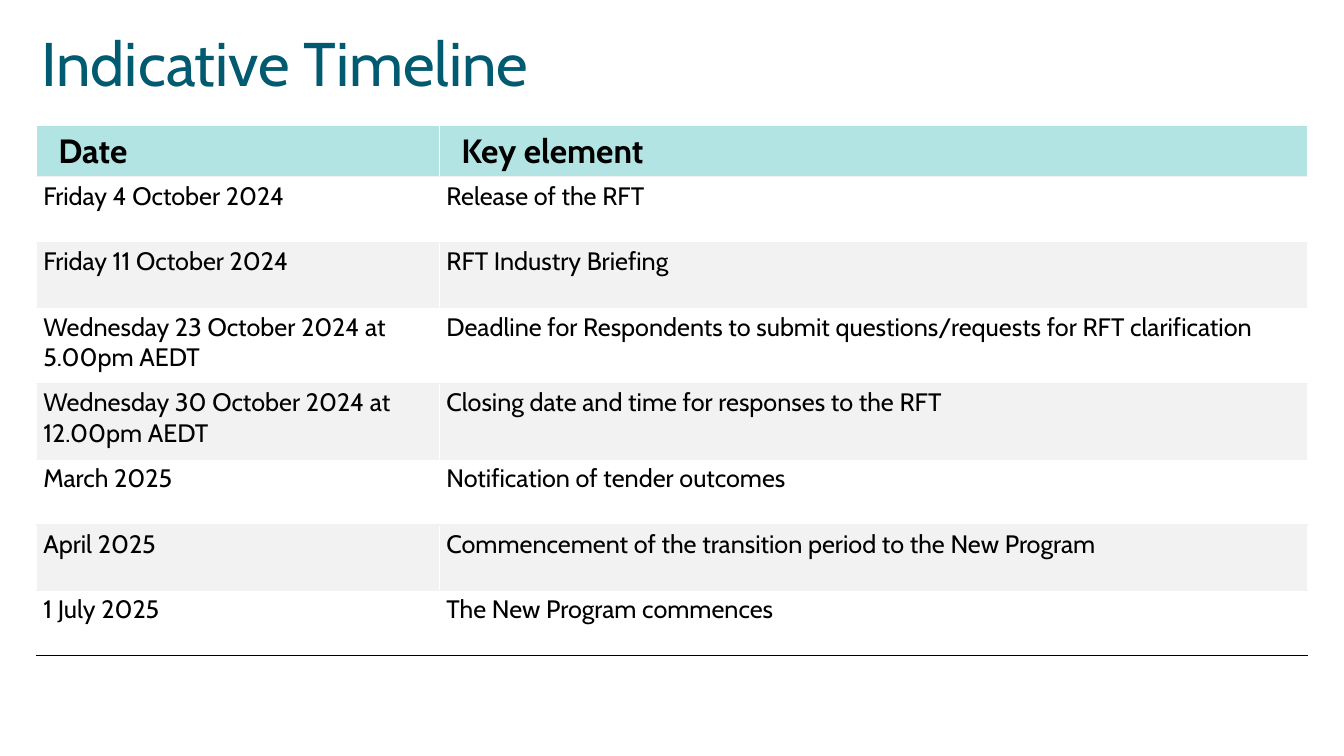
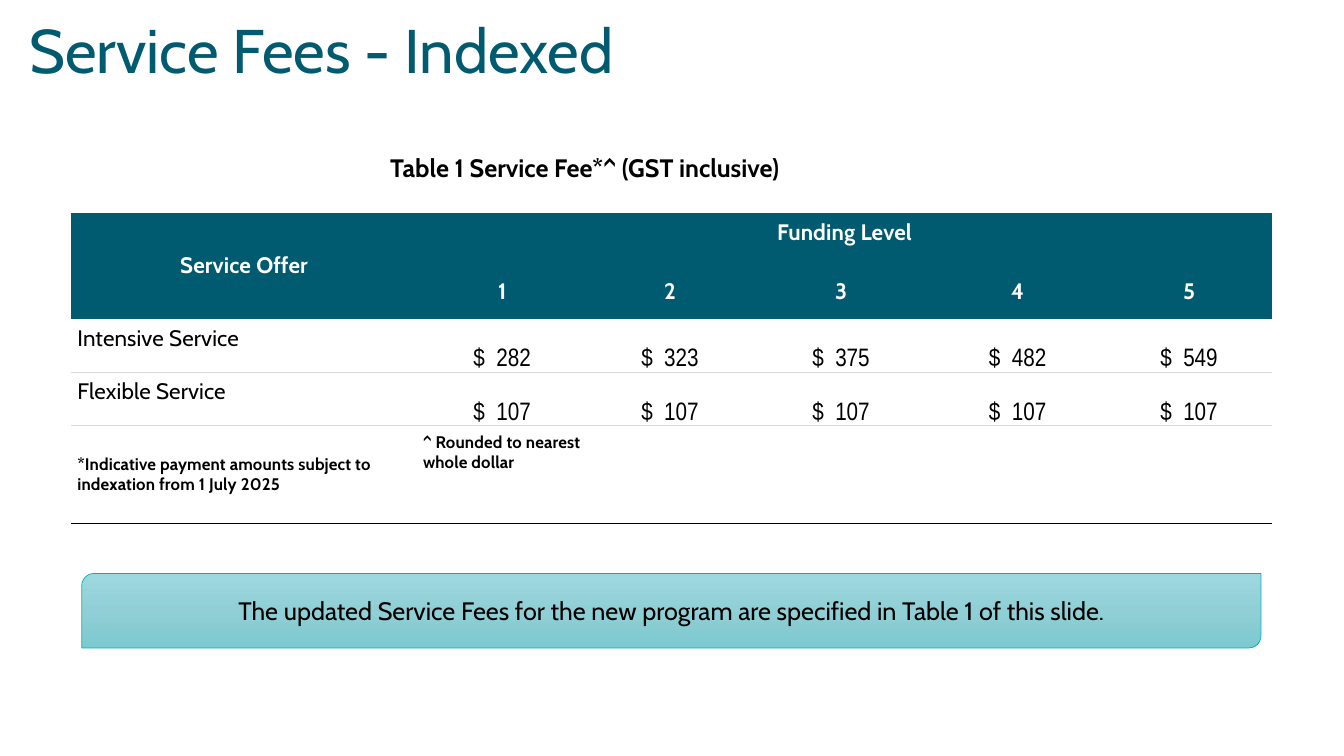
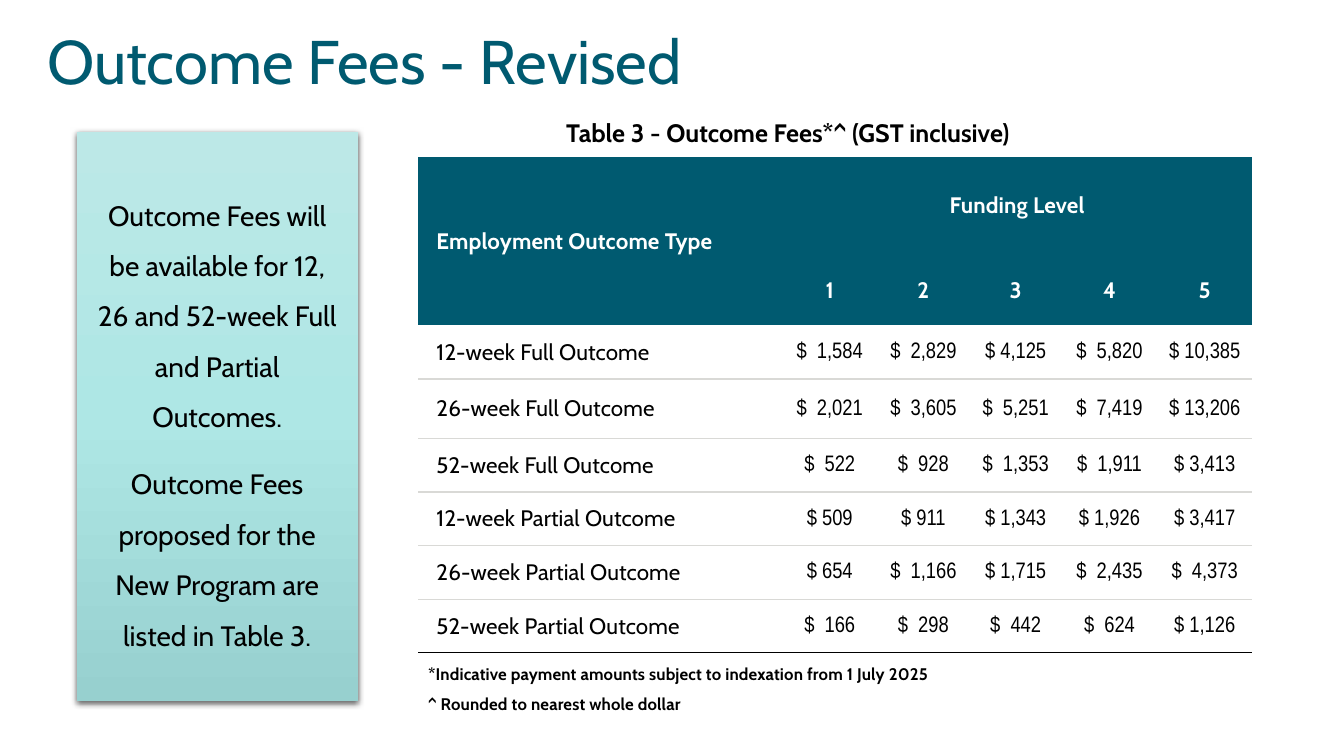
from copy import deepcopy

from lxml.etree import SubElement
from pptx import Presentation
from pptx.dml.color import RGBColor
from pptx.enum.shapes import MSO_SHAPE
from pptx.enum.text import MSO_ANCHOR, PP_ALIGN
from pptx.oxml.ns import qn
from pptx.util import Cm, Pt

# Shared palette and text formats
TEAL, AQUA, PALE, RULE = "005A70", "B1E4E3", "F2F2F2", "D9D9D6"
BLACK, WHITE = "000000", "FFFFFF"
NO_GRID_STYLE = "{2D5ABB26-0587-4C30-8999-92F81FD0307C}"

TITLE = dict(size=Pt(44), name="Cabin")
CAPTION = dict(size=Pt(18), name="Cabin", bold=True)
BODY = dict(size=Pt(18), name="Cabin")
PANEL = dict(size=Pt(20), name="Cabin")
DATE_HEAD = dict(size=Pt(24), name="Cabin", bold=True)
FEE_HEAD = dict(size=Pt(16), name="Cabin", bold=True)
FEE_LABEL = dict(size=Pt(16), name="Cabin")
NOTE = dict(size=Pt(12), name="Cabin", bold=True)

TOP, MIDDLE, BOTTOM = MSO_ANCHOR.TOP, MSO_ANCHOR.MIDDLE, MSO_ANCHOR.BOTTOM
LEFT, CENTER = PP_ALIGN.LEFT, PP_ALIGN.CENTER
# Insets in cm: left, top, right, bottom
TIMELINE_INSET = (0.18, 0.1, 0.18, 0.1)
HEAD_INSET = (0.56, 0.13, 0.25, 0.13)
FEE_INSET = (0.15, 0.15, 0.15, 0.15)
INDENTED_INSET = (0.46, 0.15, 0.15, 0.15)
AMOUNT_INSET = (0.03, 0.03, 0.03, 0)

INDEXATION = "*Indicative payment amounts subject to indexation from 1 July 2025"
ROUNDING = "^ Rounded to nearest whole dollar"


def color(value):
    return RGBColor.from_string(value)


# Text helpers
def set_insets(target, inset):
    for side, length in zip(("left", "top", "right", "bottom"), inset):
        setattr(target, f"margin_{side}", Cm(length))


def write(frame, lines, font, ink=BLACK, align=LEFT, spacing=0, **layout):
    for index, line in enumerate(lines):
        paragraph = frame.add_paragraph() if index else frame.paragraphs[0]
        paragraph.alignment = align
        if index:
            paragraph.space_before = Pt(12)
        for key, value in layout.items():
            setattr(paragraph, key, value)
        run = paragraph.add_run()
        run.text = line
        for key, value in font.items():
            setattr(run.font, key, value)
        run.font.color.rgb = color(ink)
        if spacing:
            run.font._element.set("spc", str(spacing))


def add_text(slide, box, line, font, ink=BLACK, spacing=0):
    frame = slide.shapes.add_textbox(*map(Cm, box)).text_frame
    frame.word_wrap = True
    write(frame, [line], font, ink, spacing=spacing)
    return frame


def add_title(slide, box, line):
    frame = add_text(slide, box, line, TITLE, TEAL)
    frame.vertical_anchor = BOTTOM
    set_insets(frame, (0, 0, 0, 0))


# Shape with a vertical three-step gradient
def add_gradient_shape(slide, kind, box, stops):
    shape = slide.shapes.add_shape(kind, *map(Cm, box))
    shape.shadow.inherit = False
    shape.fill.gradient()
    shape.fill.gradient_angle = 270
    stop_list = shape._element.spPr.find(qn("a:gradFill")).find(qn("a:gsLst"))
    stop_list.append(deepcopy(stop_list[0]))
    for index, (stop, value) in enumerate(zip(shape.fill.gradient_stops, stops)):
        stop.position = index / 2
        stop.color.rgb = color(value)
    shape.text_frame.word_wrap = True
    shape.text_frame.vertical_anchor = MIDDLE
    return shape


# Table helpers
def add_table(slide, corner, columns, rows):
    size = sum(columns), sum(rows)
    table = slide.shapes.add_table(
        len(rows), len(columns), *map(Cm, corner + size)).table
    table.first_row = table.horz_banding = False
    table._tbl.tblPr.find(qn("a:tableStyleId")).text = NO_GRID_STYLE
    for column, width in zip(table.columns, columns):
        column.width = Cm(width)
    for row, height in zip(table.rows, rows):
        row.height = Cm(height)
    return table


def set_borders(cell, **edges):
    properties = cell._tc.get_or_add_tcPr()
    sides = [side for side in "LRTB" if side in edges]
    for index, side in enumerate(sides):
        line = SubElement(properties, qn(f"a:ln{side}"), w=str(Pt(1)))
        fill = SubElement(line, qn("a:solidFill"))
        SubElement(fill, qn("a:srgbClr"), val=edges[side])
        properties.insert(index, line)


def fill_cell(cell, line, font, fill=None, ink=BLACK, align=LEFT,
              anchor=TOP, inset=FEE_INSET, spacing=0):
    if fill:
        cell.fill.solid()
        cell.fill.fore_color.rgb = color(fill)
    else:
        cell.fill.background()
    cell.vertical_anchor = anchor
    set_insets(cell, inset)
    if line:
        write(cell.text_frame, [line], font, ink, align, spacing)


def add_timeline(slide, corner, columns, heights, entries):
    table = add_table(slide, corner, columns, heights)
    last = len(entries) - 1
    for r, entry in enumerate(entries):
        for c, line in enumerate(entry):
            cell = table.cell(r, c)
            if r == 0:
                fill_cell(cell, line, DATE_HEAD, AQUA, inset=HEAD_INSET)
            else:
                fill_cell(cell, line, BODY, None if r % 2 else PALE,
                          inset=TIMELINE_INSET)
            set_borders(cell, L=WHITE, R=WHITE, T=PALE if r else AQUA,
                        B=AQUA if r == 0 else BLACK if r == last else PALE)


def add_fee_table(slide, corner, columns, heights, heading, fees, amount_size,
                  heading_format, level_anchor, label_format, amount_anchor,
                  notes=None):
    table = add_table(slide, corner, columns, heights)
    amount_font = dict(size=Pt(amount_size), name="Arial Narrow")

    # Two-row header
    levels = range(1, len(columns))
    head = dict(font=FEE_HEAD, fill=TEAL, ink=WHITE, spacing=10)
    table.cell(0, 0).merge(table.cell(1, 0))
    table.cell(0, 1).merge(table.cell(0, len(columns) - 1))
    fill_cell(table.cell(0, 0), heading, anchor=MIDDLE, **head, **heading_format)
    fill_cell(table.cell(0, 1), "Funding Level", align=CENTER,
              anchor=level_anchor, **head)
    for level in levels:
        fill_cell(table.cell(1, level), str(level), align=CENTER,
                  anchor=MIDDLE, **head)

    # Fee rows
    for r, (label, *amounts) in enumerate(fees, 2):
        fill_cell(table.cell(r, 0), label, FEE_LABEL, WHITE, spacing=10,
                  **label_format)
        for c, amount in enumerate(amounts, 1):
            fill_cell(table.cell(r, c), f"${amount}", amount_font, WHITE,
                      align=CENTER, anchor=amount_anchor, inset=AMOUNT_INSET)

    # Note row
    if notes:
        for c in range(len(columns)):
            line = notes[c] if c < len(notes) else ""
            fill_cell(table.cell(len(heights) - 1, c), line, NOTE, WHITE,
                      anchor=TOP if c else MIDDLE, spacing=10)

    # Rules below the header
    last = len(heights) - 1
    for r in range(2, len(heights)):
        for c in range(len(columns)):
            edges = dict(B=BLACK if r == last else RULE)
            if r > 2:
                edges["T"] = RULE
            set_borders(table.cell(r, c), **edges)


# Slides
def timeline_slide(slide):
    add_title(slide, (1.04, 1.07, 21.87, 1.42), "Indicative Timeline")
    add_timeline(
        slide, (0.91, 3.18), (10.16, 21.87),
        (1.27, 1.65, 1.65, 1.91, 1.91, 1.65, 1.65, 1.65),
        [("Date", "Key element"),
         ("Friday 4 October 2024", "Release of the RFT"),
         ("Friday 11 October 2024", "RFT Industry Briefing"),
         ("Wednesday 23 October 2024 at 5.00pm AEDT",
          "Deadline for Respondents to submit questions/requests for RFT clarification"),
         ("Wednesday 30 October 2024 at 12.00pm AEDT",
          "Closing date and time for responses to the RFT"),
         ("March 2025", "Notification of tender outcomes"),
         ("April 2025", "Commencement of the transition period to the New Program"),
         ("1 July 2025", "The New Program commences")])


def service_fee_slide(slide):
    add_title(slide, (0.74, 0.28, 22.15, 1.88), "Service Fees - Indexed")
    add_fee_table(
        slide, (1.8, 5.36), (8.71, 4.29, 4.17, 4.45, 4.45, 4.19),
        (1.32, 1.35, 1.35, 1.35, 2.46), "Service Offer",
        [("Intensive Service", "  282", "  323", "  375", "  482", "  549"),
         ("Flexible Service", *["  107"] * 5)],
        amount_size=18, heading_format=dict(align=CENTER), level_anchor=TOP,
        label_format=dict(anchor=TOP), amount_anchor=BOTTOM,
        notes=(INDEXATION, ROUNDING))
    add_text(slide, (9.58, 3.71, 13.72, 1.02),
             "Table 1 Service Fee*^ (GST inclusive)", CAPTION)
    callout = add_gradient_shape(
        slide, MSO_SHAPE.ROUND_2_DIAG_RECTANGLE, (2.06, 14.45, 29.72, 1.88),
        ("9DD8DE", "90CFD5", "7CC9D0"))
    callout.line.color.rgb = color("00B0B9")
    callout.line.width = Pt(0.5)
    write(callout.text_frame,
          ["The updated Service Fees for the new program are specified in "
           "Table 1 of this slide."], BODY, align=CENTER)


def outcome_panel(slide, box):
    panel = add_gradient_shape(slide, MSO_SHAPE.RECTANGLE, box,
                               ("BCE8E7", "AEE7E5", "97D0CF"))
    panel.line.fill.background()
    shadow = SubElement(
        panel._element.spPr.find(qn("a:effectLst")), qn("a:outerShdw"),
        blurRad=str(Pt(4.5)), dist=str(Pt(1.5)), dir="5400000", rotWithShape="0")
    shade = SubElement(shadow, qn("a:srgbClr"), val=BLACK)
    SubElement(shade, qn("a:alpha"), val="63000")
    set_insets(panel.text_frame, (0.41, 0.1, 0.41, 0.1))
    write(panel.text_frame,
          ["Outcome Fees will be available for 12, 26 and 52-week Full and "
           "Partial Outcomes.",
           "Outcome Fees proposed for the New Program are listed in Table 3."],
          PANEL, align=CENTER, line_spacing=1.5)


def outcome_fee_slide(slide):
    add_title(slide, (1.19, 0.56, 22.15, 1.88), "Outcome Fees - Revised")
    outcome_panel(slide, (1.93, 3.33, 7.09, 14.33))
    add_fee_table(
        slide, (10.54, 3.96), (9.19, 2.36, 2.36, 2.29, 2.44, 2.36),
        (2.46, 1.78, 1.35, 1.5, 1.35, 1.35, 1.35, 1.35),
        "Employment Outcome Type",
        [("12-week Full Outcome", "  1,584", "  2,829", " 4,125", "  5,820", " 10,385"),
         ("26-week Full Outcome", "  2,021", "  3,605", "  5,251", "  7,419", " 13,206"),
         ("52-week Full Outcome", "  522", "  928", "  1,353", "  1,911", " 3,413"),
         ("12-week Partial Outcome", " 509", " 911", " 1,343", " 1,926", " 3,417"),
         ("26-week Partial Outcome", " 654", "  1,166", " 1,715", "  2,435", "  4,373"),
         ("52-week Partial Outcome", "  166", "  298", "  442", "  624", " 1,126")],
        amount_size=16, heading_format=dict(inset=INDENTED_INSET),
        level_anchor=MIDDLE,
        label_format=dict(anchor=MIDDLE, inset=INDENTED_INSET),
        amount_anchor=MIDDLE)
    add_text(slide, (14.02, 2.82, 14.12, 1.02),
             "Table 3 - Outcome Fees*^ (GST inclusive)", CAPTION)
    for index, note in enumerate((INDEXATION, ROUNDING)):
        add_text(slide, (10.54, 16.59 + 0.77 * index, 18.14, 0.77), note, NOTE,
                 spacing=10)


def main():
    deck = Presentation()
    deck.slide_width, deck.slide_height = Cm(33.87), Cm(19.05)
    blank = deck.slide_layouts[6]
    for build in (timeline_slide, service_fee_slide, outcome_fee_slide):
        build(deck.slides.add_slide(blank))
    deck.save("out.pptx")


if __name__ == "__main__":
    main()
